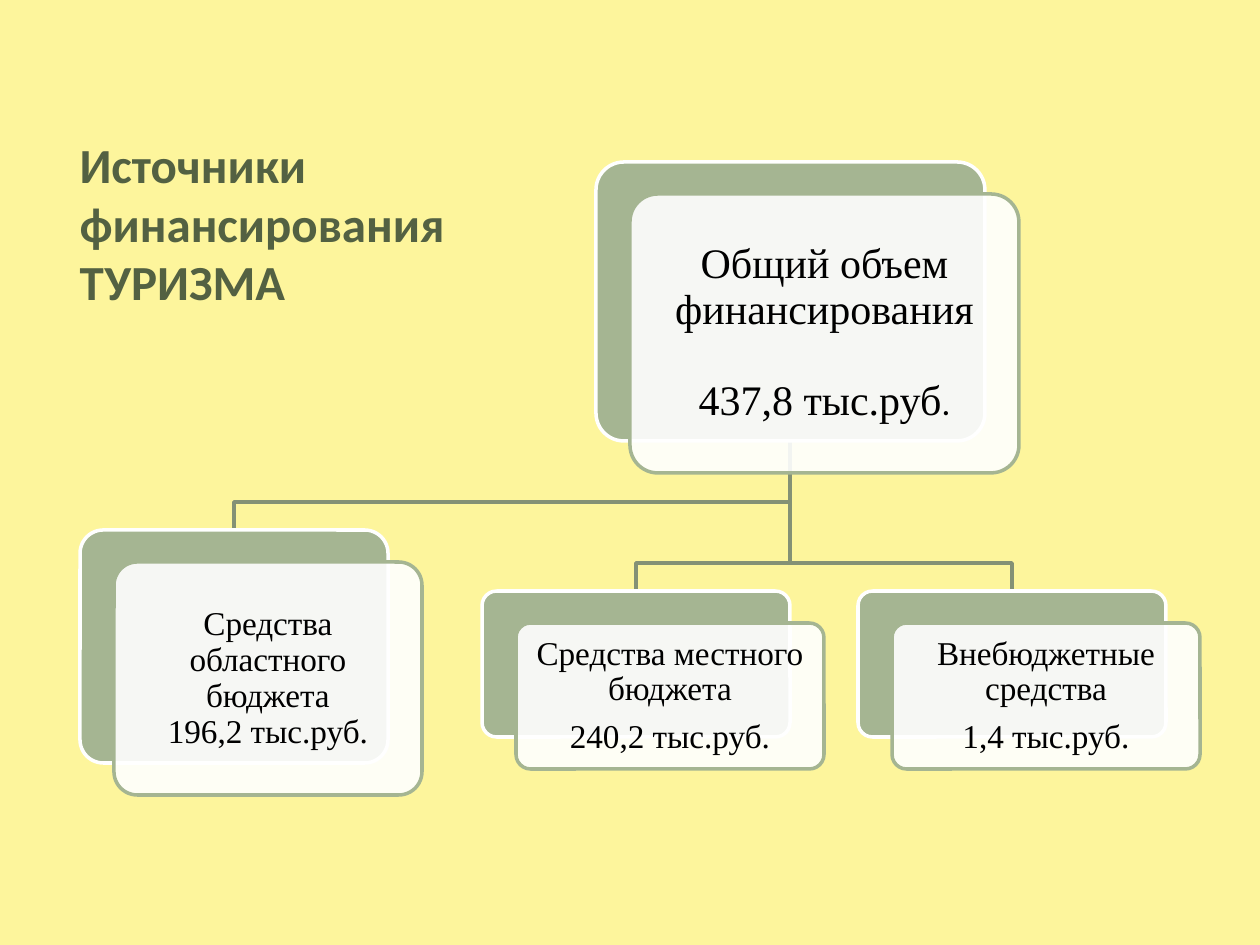
"""Build the slide on sources of tourism funding as a small tree of layered cards."""
from dataclasses import dataclass

from lxml import etree
from pptx import Presentation
from pptx.dml.color import RGBColor
from pptx.enum.shapes import MSO_SHAPE
from pptx.enum.text import MSO_ANCHOR, MSO_AUTO_SIZE, PP_ALIGN
from pptx.oxml.ns import qn
from pptx.util import Pt

ROUNDED = MSO_SHAPE.ROUNDED_RECTANGLE
MIDDLE, TOP = MSO_ANCHOR.MIDDLE, MSO_ANCHOR.TOP
CENTER, LEFT = PP_ALIGN.CENTER, PP_ALIGN.LEFT
NO_FIT = MSO_AUTO_SIZE.NONE
PX = 914400 / 126


@dataclass(frozen=True)
class Theme:
    background: str = "FDF59C"
    heading: str = "536142"
    card: str = "A5B592"
    paper: str = "FFFFFF"
    branch: str = "849175"
    ink: str = "000000"
    heading_font: str = "Calibri"
    card_font: str = "Times New Roman"
    heading_size: int = 28
    root_size: int = 24
    child_size: int = 19
    dot_size: int = 20
    line: int = 2


THEME = Theme()
TITLE = "Источники финансирования ТУРИЗМА"
TITLE_BOX = (67, 128, 542, 190)
ROOT = {"box": (596, 162, 389, 279), "size": THEME.root_size, "inset": 12, "gap": 26,
        "lines": ["Общий объем финансирования", "437,8 тыс.руб"]}
CHILD = {"size": THEME.child_size, "inset": 10}
CHILDREN = [
    {**CHILD, "box": (80, 530, 308, 233), "gap": 0,
     "lines": ["Средства\vобластного\vбюджета", "196,2 тыс.руб."]},
    {**CHILD, "box": (482, 591, 308, 146), "gap": 6.65,
     "lines": ["Средства местного бюджета", "240,2 тыс.руб."]},
    {**CHILD, "box": (858, 591, 308, 146), "gap": 6.65,
     "lines": ["Внебюджетные средства", "1,4 тыс.руб."]},
]
LAYER_SHIFT = (34, 32)
BRANCH_DROP = 28
PAPER_ALPHA = "90000"


def emu(px):
    return round(px * PX)


def color(value):
    return RGBColor.from_string(value)


def style_font(font, name, size, ink, bold=False):
    font.name, font.size, font.bold = name, Pt(size), bold
    font.color.rgb = color(ink)


def add_layer(page, box, fill, line):
    layer = page.shapes.add_shape(ROUNDED, *map(emu, box))
    layer.shadow.inherit = False
    layer.adjustments[0] = 0.1
    layer.fill.solid()
    layer.fill.fore_color.rgb = color(fill)
    layer.line.color.rgb = color(line)
    layer.line.width = Pt(THEME.line)
    return layer


def add_card(page, card):
    left, top, width, height = card["box"]
    add_layer(page, card["box"], THEME.card, THEME.paper)
    front_box = (left + LAYER_SHIFT[0], top + LAYER_SHIFT[1], width, height)
    front = add_layer(page, front_box, THEME.paper, THEME.card)
    tint = front.element.spPr.find(qn("a:solidFill")).find(qn("a:srgbClr"))
    etree.SubElement(tint, qn("a:alpha"), val=PAPER_ALPHA)

    frame = front.text_frame
    frame.word_wrap = True
    frame.vertical_anchor = MIDDLE
    frame.margin_left = frame.margin_right = emu(card["inset"])
    frame.margin_top = frame.margin_bottom = emu(card["inset"])
    frame.text = "\n".join(card["lines"])
    for paragraph in frame.paragraphs:
        paragraph.alignment = CENTER
        paragraph.line_spacing = 0.9
        paragraph.space_after = Pt(card["gap"])
        for span in paragraph.runs:
            style_font(span.font, THEME.card_font, card["size"], THEME.ink)
    return frame


def add_branch(page, parent, child):
    left, top, width, height = parent["box"]
    start_x, start_y = left + width / 2, top + height
    end_x, end_y = child["box"][0] + child["box"][2] / 2, child["box"][1]
    bend_y = end_y - BRANCH_DROP
    builder = page.shapes.build_freeform(start_x, start_y, scale=PX)
    builder.add_line_segments(
        [(start_x, bend_y), (end_x, bend_y), (end_x, end_y)], close=False)
    branch = builder.convert_to_shape()
    branch.shadow.inherit = False
    branch.fill.background()
    branch.line.color.rgb = color(THEME.branch)
    branch.line.width = Pt(THEME.line)


def add_title(page):
    title = page.shapes.title
    title.left, title.top, title.width, title.height = map(emu, TITLE_BOX)
    frame = title.text_frame
    frame.text = TITLE
    frame.word_wrap = True
    frame.auto_size = NO_FIT
    frame.vertical_anchor = TOP
    paragraph = frame.paragraphs[0]
    paragraph.alignment = LEFT
    style_font(paragraph.runs[0].font, THEME.heading_font, THEME.heading_size,
               THEME.heading, bold=True)


def main():
    deck = Presentation()
    deck.slide_width, deck.slide_height = emu(1260), emu(945)
    page = deck.slides.add_slide(deck.slide_layouts[5])
    page.background.fill.solid()
    page.background.fill.fore_color.rgb = color(THEME.background)
    add_title(page)
    for child in reversed(CHILDREN):
        add_branch(page, ROOT, child)
    root_frame = add_card(page, ROOT)
    dot = root_frame.paragraphs[-1].add_run()
    dot.text = "."
    style_font(dot.font, THEME.heading_font, THEME.dot_size, THEME.ink)
    for child in CHILDREN:
        add_card(page, child)
    deck.save("out.pptx")


if __name__ == "__main__":
    main()
